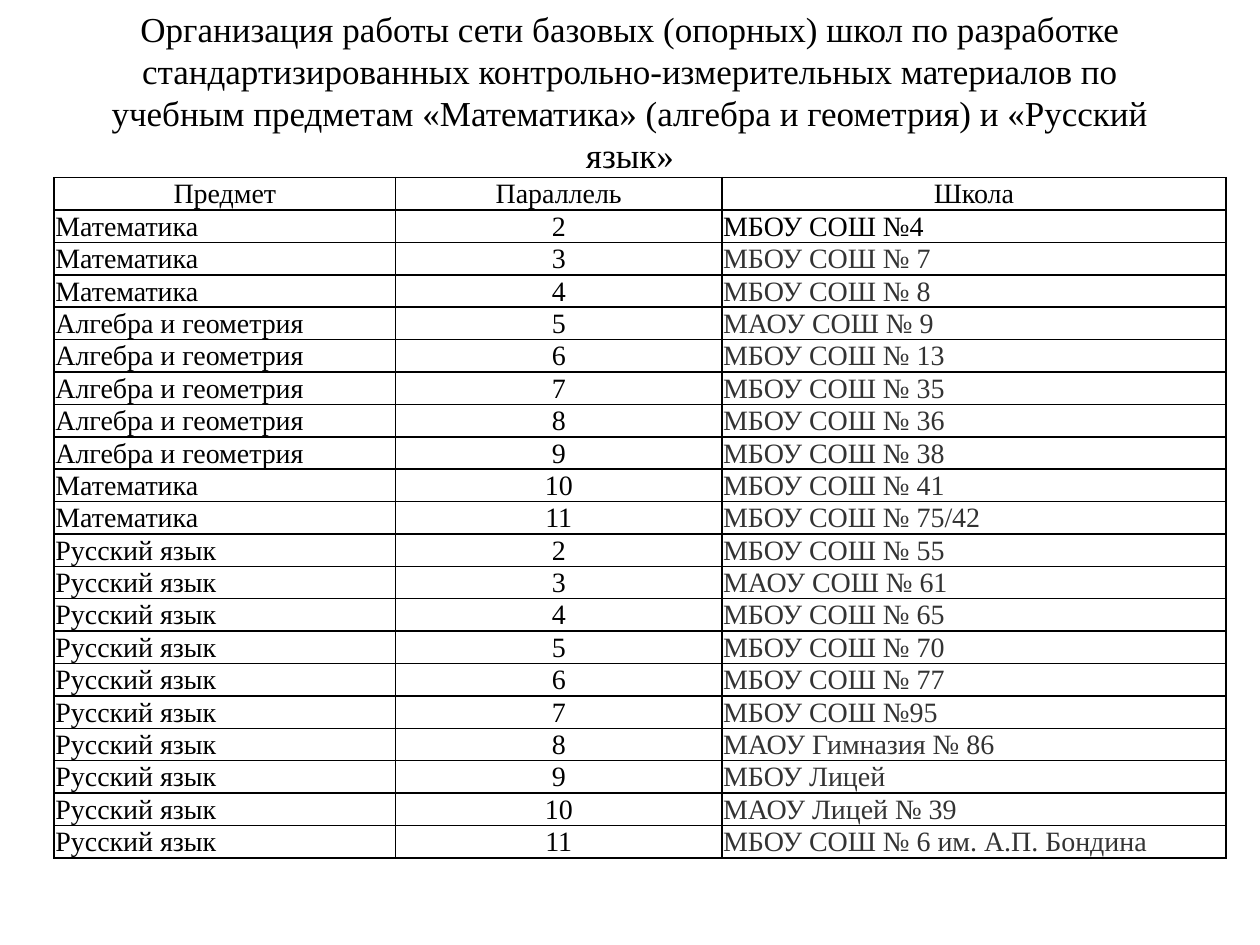
from itertools import chain

from lxml import etree
from pptx import Presentation
from pptx.dml.color import RGBColor
from pptx.enum.text import MSO_ANCHOR, MSO_AUTO_SIZE, PP_ALIGN
from pptx.oxml.ns import qn
from pptx.util import Inches, Pt

CENTER, JUSTIFY = PP_ALIGN.CENTER, PP_ALIGN.JUSTIFY
MIDDLE, TOP = MSO_ANCHOR.MIDDLE, MSO_ANCHOR.TOP

TITLE = (
    "Организация работы сети базовых (опорных) школ по разработке "
    "стандартизированных контрольно-измерительных материалов по учебным "
    "предметам «Математика» (алгебра и геометрия) и «Русский язык»"
)
HEADER = ("Предмет", "Параллель", "Школа")
MATH, ALGEBRA, RUSSIAN = "Математика", "Алгебра и геометрия", "Русский язык"
# Subject, first and last grade
SUBJECTS = [(MATH, 2, 4), (ALGEBRA, 5, 9), (MATH, 10, 11), (RUSSIAN, 2, 11)]
SCHOOLS = [
    "МБОУ СОШ №4", "МБОУ СОШ № 7", "МБОУ СОШ № 8", "МАОУ СОШ № 9",
    "МБОУ СОШ № 13", "МБОУ СОШ № 35", "МБОУ СОШ № 36", "МБОУ СОШ № 38",
    "МБОУ СОШ № 41", "МБОУ СОШ № 75/42", "МБОУ СОШ № 55", "МАОУ СОШ № 61",
    "МБОУ СОШ № 65", "МБОУ СОШ № 70", "МБОУ СОШ № 77", "МБОУ СОШ №95",
    "МАОУ Гимназия № 86", "МБОУ Лицей", "МАОУ Лицей № 39",
    "МБОУ СОШ № 6 им. А.П. Бондина",
]

COLORS = {"text": "000000", "school": "333333", "border": "000000"}
FONT = "Times New Roman"
TITLE_BOX = (0.75, 0.29, 8.5, 0.87)
TABLE_LEFT, TABLE_TOP = 0.43, 1.41
COLUMN_WIDTHS = (2.71, 2.59, 4)
ROW_HEIGHT = 0.21
INSET = 0.01


def style(para, size, align, color):
    para.alignment = align
    para.font.name = FONT
    para.font.size = Pt(size)
    para.font.color.rgb = RGBColor.from_string(color)


def add_borders(cell):
    properties = cell._tc.get_or_add_tcPr()
    for index, side in enumerate(("lnL", "lnR", "lnT", "lnB")):
        line = etree.Element(qn(f"a:{side}"), w=str(Pt(1)))
        fill = etree.SubElement(line, qn("a:solidFill"))
        etree.SubElement(fill, qn("a:srgbClr"), val=COLORS["border"])
        properties.insert(index, line)


def fill_cell(cell, text, align, color):
    cell.text = text
    cell.margin_left = cell.margin_right = cell.margin_top = Inches(INSET)
    cell.margin_bottom = 0
    cell.vertical_anchor = TOP
    cell.fill.background()
    style(cell.text_frame.paragraphs[0], 16, align, color)
    add_borders(cell)


def add_title(slide):
    title = slide.shapes.title
    title.left, title.top, title.width, title.height = map(Inches, TITLE_BOX)
    frame = title.text_frame
    frame.text = TITLE
    frame.word_wrap = True
    frame.auto_size = MSO_AUTO_SIZE.NONE
    frame.vertical_anchor = MIDDLE
    style(frame.paragraphs[0], 20, CENTER, COLORS["text"])


def add_school_table(slide):
    lessons = chain.from_iterable(
        [(subject, str(grade)) for grade in range(first, last + 1)]
        for subject, first, last in SUBJECTS
    )
    rows = [HEADER] + [(*lesson, school) for lesson, school in zip(lessons, SCHOOLS)]
    table = slide.shapes.add_table(
        len(rows), len(HEADER), Inches(TABLE_LEFT), Inches(TABLE_TOP),
        Inches(sum(COLUMN_WIDTHS)), Inches(ROW_HEIGHT * len(rows)),
    ).table
    table.first_row = table.horz_banding = False
    for column, width in zip(table.columns, COLUMN_WIDTHS):
        column.width = Inches(width)
    for r, row in enumerate(rows):
        table.rows[r].height = Inches(ROW_HEIGHT)
        for c, text in enumerate(row):
            align = CENTER if r == 0 or c == 1 else JUSTIFY
            color = COLORS["school" if c == 2 and r > 1 else "text"]
            fill_cell(table.cell(r, c), text, align, color)


def main():
    deck = Presentation()
    deck.slide_width, deck.slide_height = Inches(10), Inches(7.5)
    slide = deck.slides.add_slide(deck.slide_layouts[5])
    add_title(slide)
    add_school_table(slide)
    deck.save("out.pptx")


if __name__ == "__main__":
    main()
